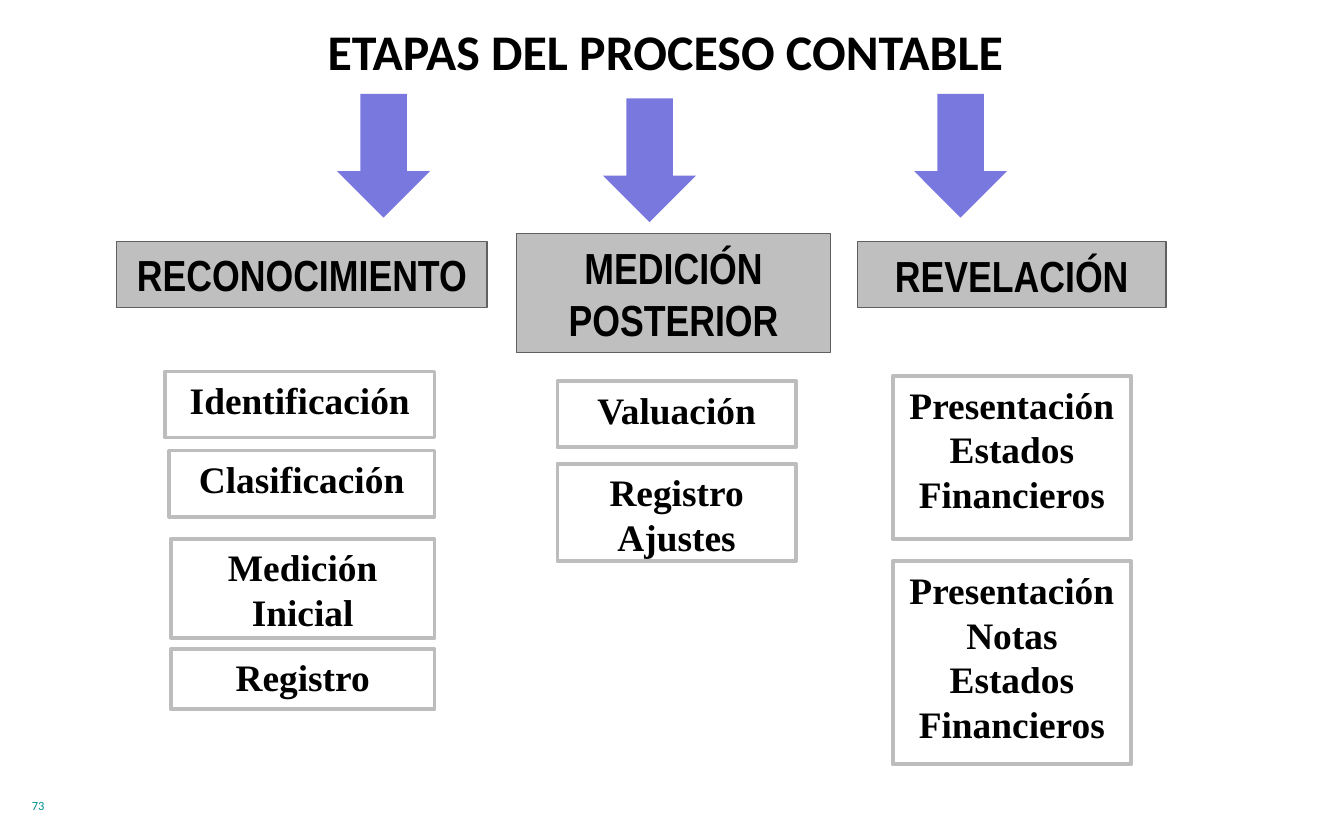
from dataclasses import dataclass

import pptx
import pptx.dml.color
import pptx.enum.shapes
import pptx.enum.text
import pptx.presentation
import pptx.shapes.autoshape
import pptx.slide
import pptx.text.text
import pptx.util

Pt = pptx.util.Pt
RGBColor = pptx.dml.color.RGBColor
Shape = pptx.shapes.autoshape.Shape
Slide = pptx.slide.Slide
TextFrame = pptx.text.text.TextFrame
MSO_ANCHOR = pptx.enum.text.MSO_ANCHOR
MSO_SHAPE = pptx.enum.shapes.MSO_SHAPE
PP_ALIGN = pptx.enum.text.PP_ALIGN


@dataclass(frozen=True)
class TextStyle:
    font: str
    size: float
    color: str = "000000"
    bold: bool = True
    align: PP_ALIGN = PP_ALIGN.CENTER
    anchor: MSO_ANCHOR = MSO_ANCHOR.TOP
    inset_x: float = 6
    inset_y: float = 3


@dataclass(frozen=True)
class BoxStyle:
    fill: str
    line: str
    line_width: float
    text: TextStyle


@dataclass(frozen=True)
class Theme:
    arrow: str
    title: TextStyle
    number: TextStyle
    heading: BoxStyle
    step: BoxStyle


@dataclass(frozen=True)
class Frame:
    left: float
    top: float
    width: float
    height: float

    def lengths(self) -> tuple[pptx.util.Length, ...]:
        return Pt(self.left), Pt(self.top), Pt(self.width), Pt(self.height)


@dataclass(frozen=True)
class Box:
    text: str
    frame: Frame


@dataclass(frozen=True)
class Stage:
    arrow: Frame
    heading: Box
    steps: tuple[Box, ...]


THEME = Theme(
    arrow="7878DE",
    title=TextStyle("Calibri", 26.7),
    number=TextStyle("Calibri", 6.7, "00918E", False, PP_ALIGN.LEFT, inset_x=7.2, inset_y=3.6),
    heading=BoxStyle(
        "BFBFBF", "606060", 0.75,
        TextStyle("Arial Narrow", 23.3, anchor=MSO_ANCHOR.MIDDLE, inset_x=7.2, inset_y=3.6),
    ),
    step=BoxStyle("FFFFFF", "BDBDBD", 2, TextStyle("Times New Roman", 20)),
)

TITLE = Box("ETAPAS DEL PROCESO CONTABLE", Frame(69.8, 7.9, 573.8, 73.4))
NUMBER = Box("73", Frame(10, 424, 150, 21.6))

STAGES = (
    Stage(
        Frame(180.6, 50.3, 49.8, 66.3),
        Box("RECONOCIMIENTO", Frame(62.5, 129.3, 198.5, 35.5)),
        (
            Box("Identificación", Frame(88.5, 199, 144.3, 35.5)),
            Box("Clasificación", Frame(90.6, 241.4, 142.2, 35.5)),
            Box("Medición Inicial", Frame(91.6, 288.7, 141.2, 53)),
            Box("Registro", Frame(91.6, 347.6, 141.2, 32.4)),
        ),
    ),
    Stage(
        Frame(323.1, 52.7, 49.8, 66.3),
        Box("MEDICIÓN POSTERIOR", Frame(276.6, 125.1, 168.4, 63.8)),
        (
            Box("Valuación", Frame(298.6, 204.2, 127.8, 35.5)),
            Box("Registro Ajustes", Frame(298.6, 248.5, 127.8, 52)),
        ),
    ),
    Stage(
        Frame(489.7, 50.3, 49.8, 66.3),
        Box("REVELACIÓN", Frame(459.3, 129.4, 165.4, 35.5)),
        (
            Box("Presentación Estados Financieros", Frame(478.2, 201.5, 127.8, 87.4)),
            Box("Presentación Notas Estados Financieros", Frame(478.2, 300.7, 127.8, 108.7)),
        ),
    ),
)


def write_text(text_frame: TextFrame, text: str, style: TextStyle) -> None:
    text_frame.text = text
    text_frame.word_wrap = True
    text_frame.auto_size = pptx.enum.text.MSO_AUTO_SIZE.NONE
    text_frame.vertical_anchor = style.anchor
    text_frame.margin_left = text_frame.margin_right = Pt(style.inset_x)
    text_frame.margin_top = text_frame.margin_bottom = Pt(style.inset_y)
    for paragraph in text_frame.paragraphs:
        paragraph.alignment = style.align
        for run in paragraph.runs:
            run.font.name = style.font
            run.font.size = Pt(style.size)
            run.font.bold = style.bold
            run.font.color.rgb = RGBColor.from_string(style.color)


def add_filled_shape(slide: Slide, kind: MSO_SHAPE, frame: Frame, fill: str) -> Shape:
    shape = slide.shapes.add_shape(kind, *frame.lengths())
    shape.shadow.inherit = False
    shape.fill.solid()
    shape.fill.fore_color.rgb = RGBColor.from_string(fill)
    return shape


def add_box(slide: Slide, box: Box, style: BoxStyle) -> None:
    shape = add_filled_shape(slide, MSO_SHAPE.RECTANGLE, box.frame, style.fill)
    shape.line.color.rgb = RGBColor.from_string(style.line)
    shape.line.width = Pt(style.line_width)
    write_text(shape.text_frame, box.text, style.text)


def add_stage(slide: Slide, stage: Stage) -> None:
    arrow = add_filled_shape(slide, MSO_SHAPE.DOWN_ARROW, stage.arrow, THEME.arrow)
    arrow.line.fill.background()
    add_box(slide, stage.heading, THEME.heading)
    for step in stage.steps:
        add_box(slide, step, THEME.step)


def add_title(slide: Slide) -> None:
    title = slide.shapes.title
    title.left, title.top, title.width, title.height = TITLE.frame.lengths()
    write_text(title.text_frame, TITLE.text, THEME.title)


def add_number(slide: Slide) -> None:
    number = slide.shapes.add_textbox(*NUMBER.frame.lengths())
    write_text(number.text_frame, NUMBER.text, THEME.number)


def main() -> None:
    presentation = pptx.Presentation()
    presentation.slide_width = Pt(720)
    presentation.slide_height = Pt(450)
    slide = presentation.slides.add_slide(presentation.slide_layouts.get_by_name("Title Only"))
    add_title(slide)
    add_number(slide)
    for stage in STAGES:
        add_stage(slide, stage)
    presentation.save("out.pptx")


if __name__ == "__main__":
    main()
